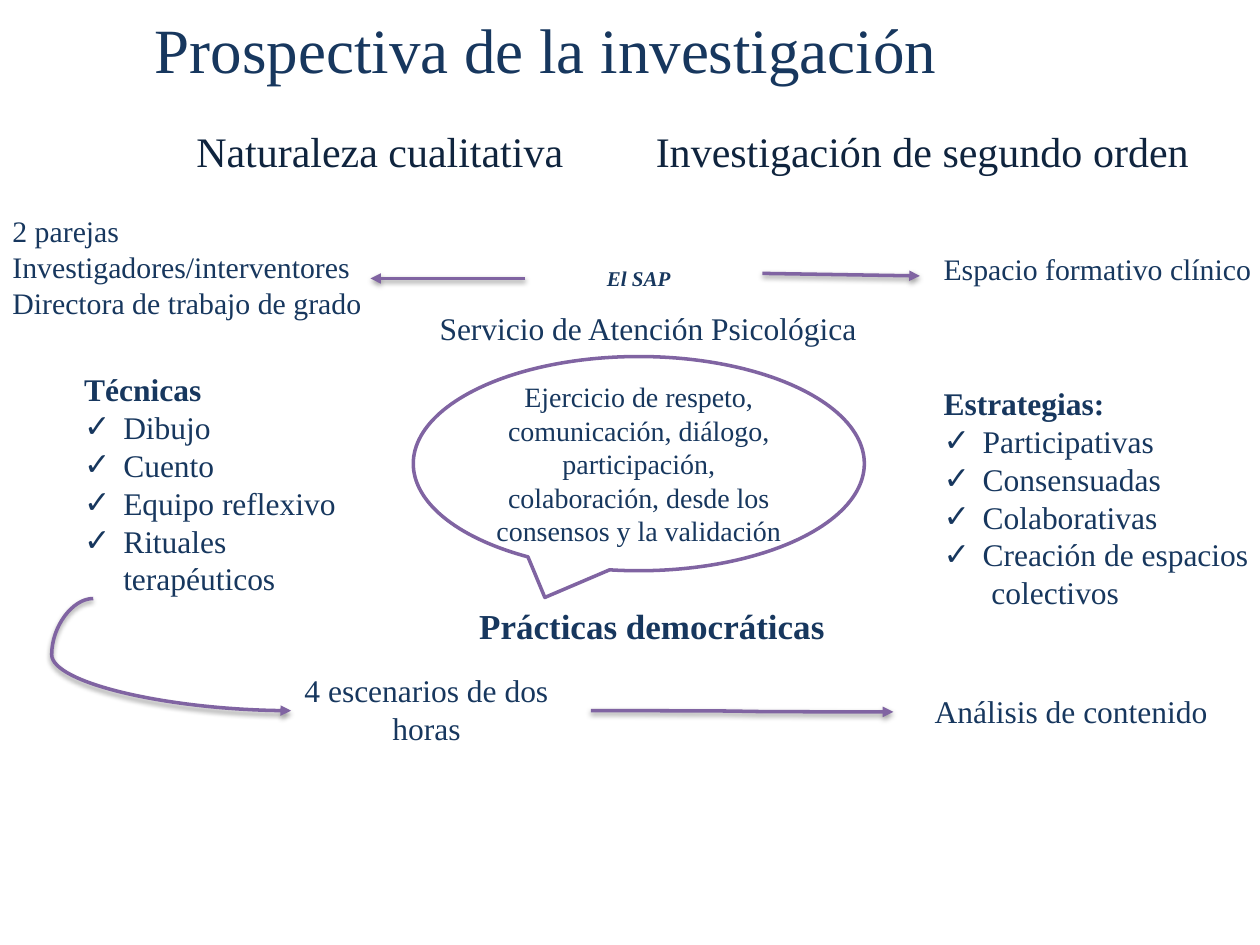
from lxml.etree import SubElement
from pptx import Presentation
from pptx.dml.color import RGBColor
from pptx.enum.shapes import MSO_CONNECTOR as Link, MSO_SHAPE as Preset
from pptx.enum.text import MSO_ANCHOR as Anchor, MSO_AUTO_SIZE as Fit, PP_ALIGN as Align
from pptx.oxml.ns import qn
from pptx.util import Inches, Pt

FONT = "Times New Roman"
NAVY, DARK, PURPLE, WHITE = "17375E", "0F243E", "8064A2", "FFFFFF"

# Content: text, (left, top, width, height), size, further formatting
TITLE = ("Prospectiva de la investigación", (1.13, 0.03, 7.75, 0.71), 36)
CALLOUT = ("Ejercicio de respeto, comunicación, diálogo, participación, "
           "colaboración, desde los consensos y la validación",
           (3.28, 2.83, 3.58, 1.7), 16)
LABELS = [
    ("Investigación de segundo orden", (5.07, 0.95, 4.5, 0.5), 24,
     dict(color=DARK, align=Align.CENTER)),
    ("Naturaleza cualitativa", (1.46, 0.95, 3.23, 0.5), 24, dict(color=DARK)),
    ("El SAP", (4.17, 2.01, 1.8, 0.39), 12,
     dict(bold=True, italic=True, align=Align.CENTER, anchor=Anchor.MIDDLE)),
    ("Espacio formativo clínico", (7.39, 1.94, 3.83, 0.39), 17, {}),
    ("Servicio de Atención Psicológica", (3.39, 2.4, 3.83, 0.4), 18, {}),
    ("2 parejas\nInvestigadores/interventores\nDirectora de trabajo de grado",
     (0, 1.64, 3.58, 0.96), 17, {}),
    ("4 escenarios de dos horas", (2.31, 5.28, 2.15, 0.71), 18, dict(align=Align.CENTER)),
    ("Análisis de contenido", (7.32, 5.44, 2.4, 0.4), 18, {}),
    ("Prácticas democráticas", (3.26, 4.75, 3.83, 0.44), 20,
     dict(bold=True, align=Align.CENTER)),
]
# Heading, checked items, indented last line, place
LISTS = [
    ("Estrategias:", ["Participativas", "Consensuadas", "Colaborativas",
                      "Creación de espacios"], "colectivos", (7.39, 3, 2.71, 2.22)),
    ("Técnicas", ["Dibujo", "Cuento", "Equipo reflexivo", "Rituales terapéuticos"],
     None, (0.57, 2.89, 2.28, 1.92)),
]
# Kind, start, end, bend (share of the width, in thousandths of a percent)
ARROWS = [
    (Link.STRAIGHT, (4.17, 2.21), (2.94, 2.21), None),
    (Link.STRAIGHT, (6.05, 2.17), (7.3, 2.19), None),
    (Link.CURVE, (0.74, 4.75), (2.31, 5.64), -21000),
    (Link.CURVE, (4.69, 5.64), (7.09, 5.65), 50000),
]


def rgb(value):
    return RGBColor.from_string(value)


def inches(values):
    return [Inches(value) for value in values]


def write(shape, text, size, color=NAVY, bold=False, italic=False,
          align=Align.LEFT, anchor=Anchor.TOP):
    frame = shape.text_frame
    frame.text = text
    frame.word_wrap = True
    frame.auto_size = Fit.NONE
    frame.vertical_anchor = anchor
    for para in frame.paragraphs:
        para.alignment = align
        for span in para.runs:
            font = span.font
            font.name, font.size, font.bold, font.italic = FONT, Pt(size), bold, italic
            font.color.rgb = rgb(color)


def add_label(page, text, place, size, style):
    box = page.shapes.add_textbox(*inches(place))
    write(box, text, size, **style)
    return box


def indent(para, left, first=0.0, mark=None):
    props = para._p.get_or_add_pPr()
    props.set("marL", str(Inches(left)))
    props.set("indent", str(Inches(first)))
    if mark:
        SubElement(props, qn("a:buFont"), typeface="Arial")
        SubElement(props, qn("a:buChar"), char=mark)


def add_list(page, heading, items, ending, place):
    lines = [heading, *items] + ([ending] if ending else [])
    box = add_label(page, "\n".join(lines), place, 18, {})
    paras = box.text_frame.paragraphs
    paras[0].runs[0].font.bold = True
    for para in paras[1:len(items) + 1]:
        indent(para, 0.31, -0.31, "✓")
    if ending:
        indent(paras[-1], 0.38)


def add_arrow(page, kind, start, end, bend):
    arrow = page.shapes.add_connector(kind, *inches(start + end))
    arrow.line.color.rgb = rgb(PURPLE)
    arrow.line.width = Pt(2)
    SubElement(arrow.line._get_or_add_ln(), qn("a:tailEnd"), type="triangle")
    props = arrow._element.spPr
    if bend is not None:
        SubElement(props.find(qn("a:prstGeom")).find(qn("a:avLst")), qn("a:gd"),
                   name="adj1", fmla=f"val {bend}")
    # Soft shadow below the line
    shadow = SubElement(SubElement(props, qn("a:effectLst")), qn("a:outerShdw"),
                        blurRad=str(Pt(3.1)), dist=str(Pt(1.6)), dir="5400000",
                        rotWithShape="0")
    shade = SubElement(shadow, qn("a:srgbClr"), val="000000")
    SubElement(shade, qn("a:alpha"), val="38000")


def main():
    deck = Presentation()
    deck.slide_width, deck.slide_height = inches((10, 7.5))
    page = deck.slides.add_slide(deck.slide_layouts[5])

    # Title
    text, place, size = TITLE
    title = page.shapes.title
    title.left, title.top, title.width, title.height = inches(place)
    write(title, text, size)

    # Speech bubble
    text, place, size = CALLOUT
    bubble = page.shapes.add_shape(Preset.OVAL_CALLOUT, *inches(place))
    bubble.shadow.inherit = False
    bubble.fill.solid()
    bubble.fill.fore_color.rgb = rgb(WHITE)
    bubble.line.color.rgb = rgb(PURPLE)
    bubble.line.width = Pt(2)
    write(bubble, text, size, align=Align.CENTER, anchor=Anchor.MIDDLE)

    # Labels, check lists and arrows
    for label in LABELS:
        add_label(page, *label)
    for check_list in LISTS:
        add_list(page, *check_list)
    for arrow in ARROWS:
        add_arrow(page, *arrow)

    deck.save("out.pptx")


if __name__ == "__main__":
    main()
